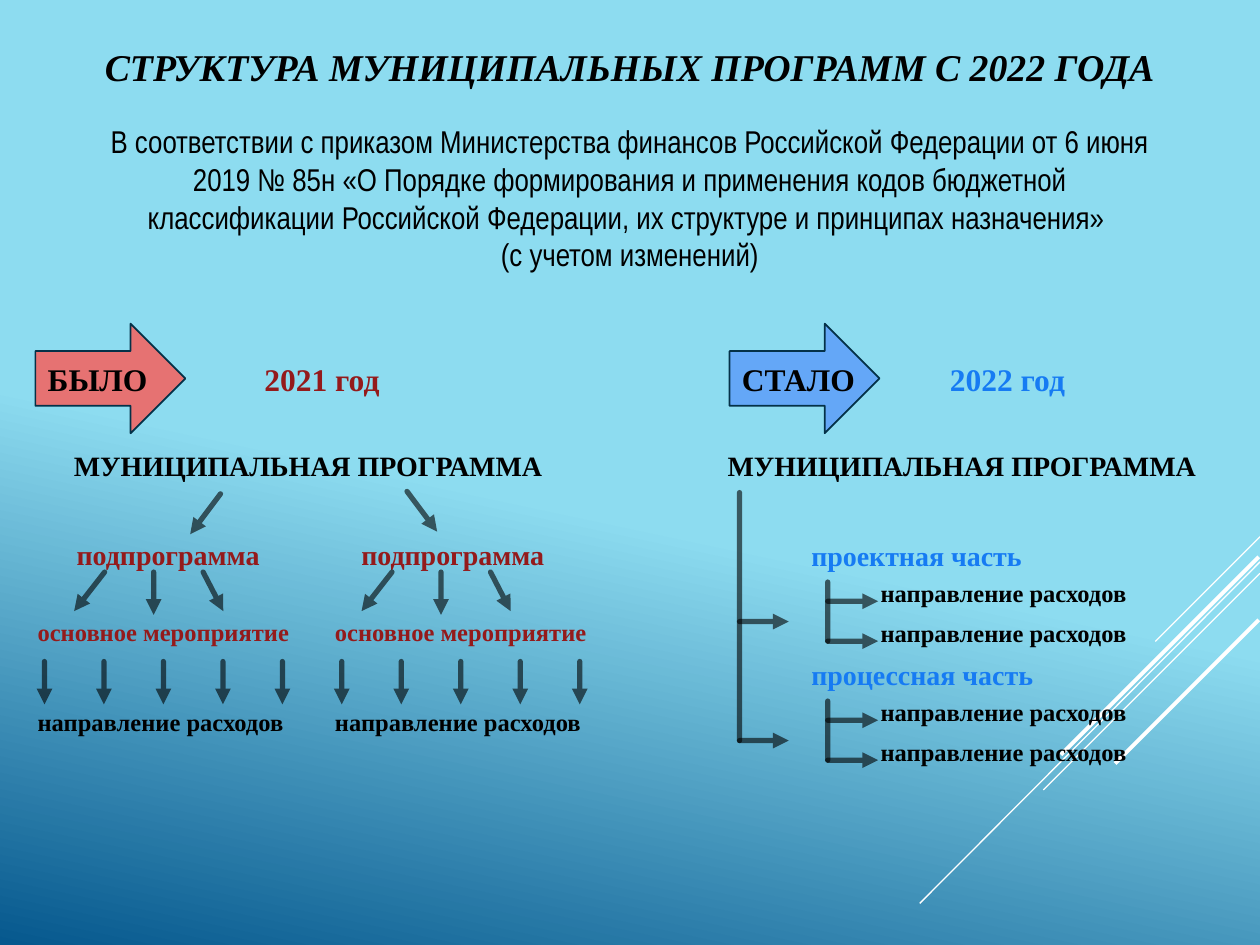
from lxml import etree
from pptx import Presentation
from pptx import util as u
from pptx.dml.color import RGBColor
from pptx.enum import shapes, text
from pptx.oxml.ns import qn

SERIF, SANS = "Times New Roman", "Arial Narrow"
BLACK, WHITE, RED, BLUE = "000000", "FFFFFF", "941A1B", "167BF3"
LEFT, MID = text.PP_ALIGN.LEFT, text.PP_ALIGN.CENTER

TITLE = "СТРУКТУРА МУНИЦИПАЛЬНЫХ ПРОГРАММ С 2022 ГОДА"
INTRO = [
    "В соответствии с приказом Министерства финансов Российской Федерации "
    "от 6 июня 2019 № 85н «О Порядке формирования и применения кодов бюджетной "
    "классификации Российской Федерации, их структуре и принципах назначения» ",
    "(с учетом изменений)",
]
PROGRAM = "МУНИЦИПАЛЬНАЯ ПРОГРАММА"
SUB, EVENT, SPEND = "подпрограмма", "основное мероприятие", "направление расходов"

# Stage: label, arrow left, arrow fill, year, year left, year colour, program left
STAGES = [
    ("БЫЛО", 20.2, "E67272", "2021 год", 121.7, RED, 20.2),
    ("СТАЛО", 416.9, "64A7F7", "2022 год", 513.4, BLUE, 393.8),
]
# 2021 branch: subprogram left, fan centre, lower text left, arrow from, arrow to
BRANCHES = [
    (36.7, 87.8, 14.4, (126, 282.2), (108.7, 305.3)),
    (199.4, 252, 184.3, (232.6, 280.8), (249.8, 303.8)),
]
FAN = [(-28, -45.4, 349.2), (0, 0, 351.4), (28.3, 39.8, 349.2)]
# 2022 part: name, width
PARTS = [("проектная часть", 136.5), ("процессная часть", 148)]
# Corner rays: from, to, weight
RAYS = [
    ((720, 306.7), (660.2, 366.5), 0.75),
    ((720, 321.1), (525.6, 516.2), 0.75),
    ((720, 327.6), (596.2, 451.4), 0.75),
    ((719.3, 318.2), (606.2, 431.3), 2.25),
    ((719.3, 354.2), (637.2, 436.3), 2.25),
]


def color(code):
    return RGBColor.from_string(code)


def write(lines, x, y, w, h, size, code=BLACK, align=LEFT, font=SERIF,
          bold=True, slant=False):
    box = slide.shapes.add_textbox(u.Pt(x), u.Pt(y), u.Pt(w), u.Pt(h))
    frame = box.text_frame
    frame.word_wrap = True
    frame.text = "\n".join(lines)
    for para in frame.paragraphs:
        para.alignment = align
        for run in para.runs:
            face = run.font
            face.name, face.size = font, u.Pt(size)
            face.bold, face.italic = bold, slant
            face.color.rgb = color(code)
    return frame


def draw(start, end, width, code):
    line = slide.shapes.add_connector(
        shapes.MSO_CONNECTOR.STRAIGHT, *(u.Pt(v) for v in (*start, *end)))
    line.line.width = u.Pt(width)
    line.line.color.rgb = color(code)
    etree.SubElement(line._element.spPr, qn("a:effectLst"))
    return line.line._get_or_add_ln()


def link(start, end, head=True):
    """Translucent black line with round caps, with or without an arrowhead."""
    ln = draw(start, end, 3, BLACK)
    ln.set("cap", "rnd")
    tint = ln.find(".//" + qn("a:srgbClr"))
    etree.SubElement(tint, qn("a:alpha"), val="60000")
    if head:
        etree.SubElement(ln, qn("a:tailEnd"), type="triangle")


deck = Presentation()
deck.slide_width, deck.slide_height = u.Pt(720), u.Pt(540)
slide = deck.slides.add_slide(deck.slide_layouts[6])

# Background and corner rays
back = slide.background.fill
back.gradient()
back.gradient_angle = 258
for stop, (pos, code) in zip(back.gradient_stops, [(0.54, "8DDCF0"), (1, "06588E")]):
    stop.position = pos
    stop.color.rgb = color(code)
for start, end, width in RAYS:
    draw(start, end, width, WHITE)

# Heading
head = write([TITLE], 36, 15.1, 648, 45.4, 21.6, align=MID, slant=True)
head.vertical_anchor = text.MSO_ANCHOR.MIDDLE
write(INTRO, 48.2, 66.2, 623.5, 94.3, 18, align=MID, font=SANS, bold=False)

# Stage arrows, years and program names
for label, x, fill, year, year_x, code, prog_x in STAGES:
    arrow = slide.shapes.add_shape(
        shapes.MSO_SHAPE.RIGHT_ARROW, u.Pt(x), u.Pt(185), u.Pt(85.7), u.Pt(62.6))
    arrow.shadow.inherit = False
    arrow.fill.solid()
    arrow.fill.fore_color.rgb = color(fill)
    arrow.line.color.rgb = color("043148")
    arrow.line.width = u.Pt(1)
    write([label], x, 202.3, 80, 28.8, 18)
    write([year], year_x, 202.3, 124.6, 28.8, 18, code, MID)
    write([PROGRAM], prog_x, 252.7, 311.8, 26.6, 16, align=MID)

# 2021: subprograms, events, spending
for sub_x, fan_x, low_x, start, end in BRANCHES:
    link(start, end)
    write([SUB], sub_x, 303.8, 121, 26.6, 16, RED)
    for top, low, y in FAN:
        link((fan_x + top, 326.9), (fan_x + low, y))
    write([EVENT], low_x, 349.2, 164, 24.5, 14, RED)
    for i in range(5):
        x = low_x + 11 + 34 * i
        link((x, 378), (x, 402.5))
    write([SPEND], low_x, 400.3, 157, 24.5, 14)

# 2022: trunk with two parts, each with two spending lines
link((422.6, 281.5), (422.6, 423.2), head=False)
for i, (name, width) in enumerate(PARTS):
    y = 304 + 68 * i
    link((422.6, y + 51.2), (450.7, y + 51.2))
    write([name], 456.5, y, width, 26.6, 16, BLUE)
    link((473, y + 28.6), (473, y + 62.4), head=False)
    for j in range(2):
        row = y + 22.8 * j
        write([SPEND], 496.1, row + 22.8, 157, 24.5, 14)
        link((473, row + 39.6), (501.8, row + 39.6))

deck.save("out.pptx")
